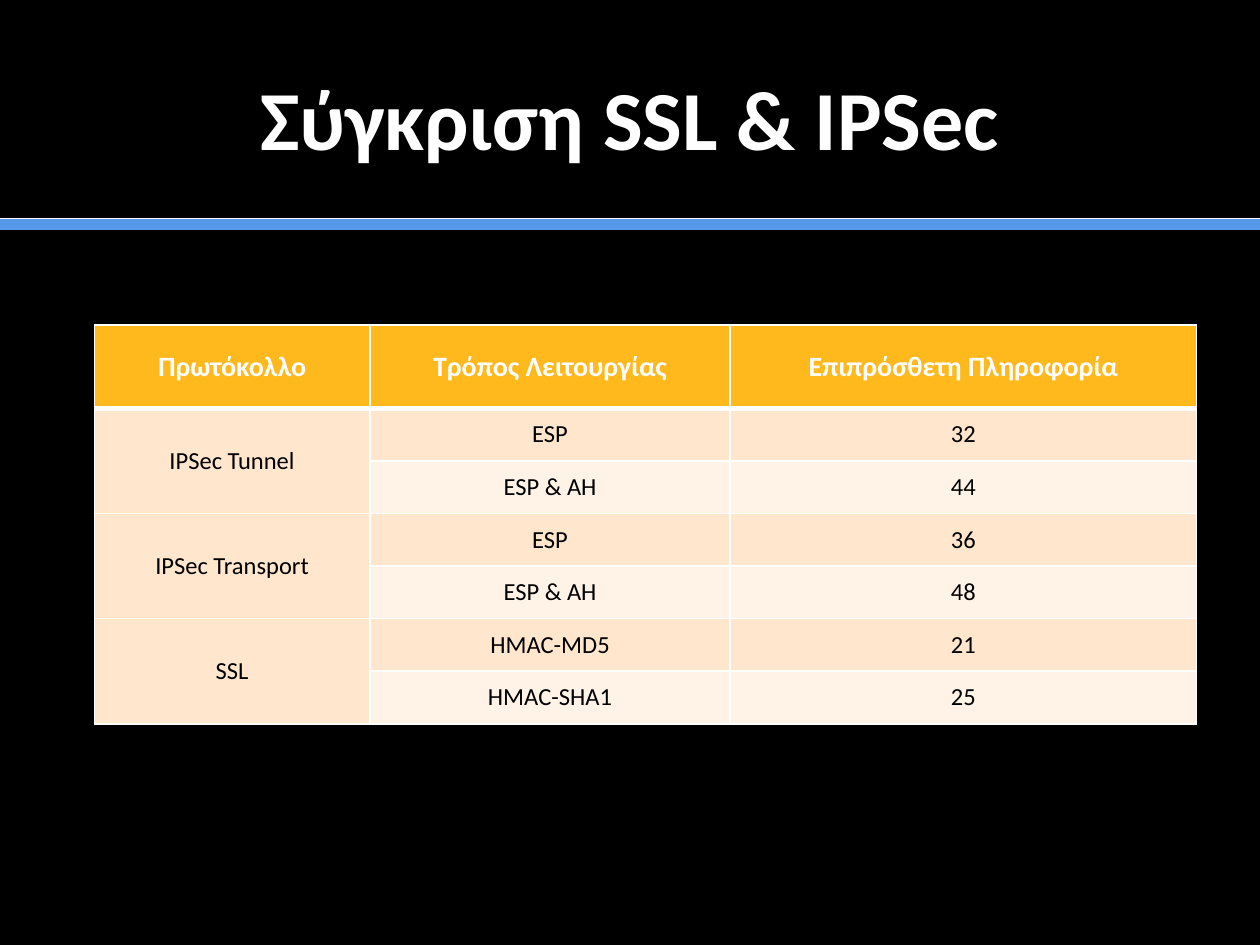
from dataclasses import dataclass

from lxml import etree
from pptx import Presentation
from pptx.dml.color import RGBColor
from pptx.enum.shapes import MSO_CONNECTOR
from pptx.enum.text import MSO_ANCHOR, PP_ALIGN
from pptx.oxml.ns import qn
from pptx.util import Cm, Pt

STRAIGHT = MSO_CONNECTOR.STRAIGHT
MIDDLE = MSO_ANCHOR.MIDDLE
CENTER = PP_ALIGN.CENTER

SLIDE_WIDTH, SLIDE_HEIGHT = 25.4, 19.05
HEADINGS = ["Πρωτόκολλο", "Τρόπος Λειτουργίας", "Επιπρόσθετη Πληροφορία"]
PROTOCOLS = [
    ("IPSec Tunnel", [("ESP", "32"), ("ESP & AH", "44")]),
    ("IPSec Transport", [("ESP", "36"), ("ESP & AH", "48")]),
    ("SSL", [("HMAC-MD5", "21"), ("HMAC-SHA1", "25")]),
]
COLUMN_WIDTHS = [5.56, 7.26, 9.4]
HEADER_HEIGHT, ROW_HEIGHT = 1.68, 1.06


@dataclass(frozen=True)
class Theme:
    font: str = "Calibri"
    background: str = "000000"
    light: str = "FFFFFF"
    dark: str = "000000"
    accent: str = "5799E8"
    header: str = "FFB91D"
    band: str = "FFE6CD"
    band_light: str = "FFF3E8"
    title_size: float = 48
    header_size: float = 16
    body_size: float = 14
    border: float = 1
    header_border: float = 3


def write(frame, text, *, font, size, color, bold=False):
    """Fill a text frame with one centred paragraph."""
    paragraph = frame.paragraphs[0]
    paragraph.alignment = CENTER
    run = paragraph.add_run()
    run.text = text
    run.font.name = font
    run.font.size = Pt(size)
    run.font.bold = bold
    run.font.color.rgb = RGBColor.from_string(color)


def set_borders(cell, color, **widths):
    """Draw cell edges; widths are points keyed by L, R, T and B."""
    properties = cell._tc.get_or_add_tcPr()
    for side in "LRTB":
        edge = etree.SubElement(properties, qn(f"a:ln{side}"), w=str(Pt(widths[side])))
        fill = etree.SubElement(edge, qn("a:solidFill"))
        etree.SubElement(fill, qn("a:srgbClr"), val=color)


class SlideBuilder:
    def __init__(self, slide, theme):
        self.slide = slide
        self.theme = theme

    def background(self):
        fill = self.slide.background.fill
        fill.solid()
        fill.fore_color.rgb = RGBColor.from_string(self.theme.background)

    def rule(self, y, color, width):
        """Draw a line across the whole slide."""
        rule = self.slide.shapes.add_connector(
            STRAIGHT, Cm(0), Cm(y), Cm(SLIDE_WIDTH), Cm(y))
        rule.line.color.rgb = RGBColor.from_string(color)
        rule.line.width = Pt(width)
        etree.SubElement(rule._element.spPr, qn("a:effectLst"))

    def title(self, text, left, top, width, height):
        frame = self.slide.shapes.add_textbox(
            Cm(left), Cm(top), Cm(width), Cm(height)).text_frame
        frame.word_wrap = True
        frame.vertical_anchor = MIDDLE
        write(frame, text, font=self.theme.font, size=self.theme.title_size,
              color=self.theme.light, bold=True)

    def cell(self, cell, text, fill, *, heading=False, below_heading=False):
        theme = self.theme
        set_borders(cell, theme.light, L=theme.border, R=theme.border,
                    T=theme.header_border if below_heading else theme.border,
                    B=theme.header_border if heading else theme.border)
        cell.fill.solid()
        cell.fill.fore_color.rgb = RGBColor.from_string(fill)
        cell.vertical_anchor = MIDDLE
        if text:
            write(cell.text_frame, text, font=theme.font, bold=heading,
                  size=theme.header_size if heading else theme.body_size,
                  color=theme.light if heading else theme.dark)

    def protocol_table(self, headings, protocols, left, top):
        """Build the table, each protocol cell spanning its modes."""
        theme = self.theme
        heights = [HEADER_HEIGHT] + [ROW_HEIGHT] * sum(len(modes) for _, modes in protocols)
        table = self.slide.shapes.add_table(
            len(heights), len(headings), Cm(left), Cm(top),
            Cm(sum(COLUMN_WIDTHS)), Cm(sum(heights))).table
        for column, width in zip(table.columns, COLUMN_WIDTHS):
            column.width = Cm(width)
        for row, height in zip(table.rows, heights):
            row.height = Cm(height)

        for column, heading in enumerate(headings):
            self.cell(table.cell(0, column), heading, theme.header, heading=True)
        row = 1
        for protocol, modes in protocols:
            first = row
            for mode, overhead in modes:
                label = protocol if row == first else ""
                band = theme.band if row % 2 else theme.band_light
                contents = [(label, theme.band), (mode, band), (overhead, band)]
                for column, (text, fill) in enumerate(contents):
                    self.cell(table.cell(row, column), text, fill, below_heading=row == 1)
                row += 1
            table.cell(first, 0).merge(table.cell(row - 1, 0))


def main():
    presentation = Presentation()
    presentation.slide_width = Cm(SLIDE_WIDTH)
    presentation.slide_height = Cm(SLIDE_HEIGHT)
    theme = Theme()
    builder = SlideBuilder(
        presentation.slides.add_slide(presentation.slide_layouts[6]), theme)
    builder.background()
    builder.rule(4.52, theme.accent, 7)
    builder.rule(4.4, theme.light, 0.5)
    builder.title("Σύγκριση SSL & IPSec", 1.27, 0.76, 22.86, 3.18)
    builder.protocol_table(HEADINGS, PROTOCOLS, 1.9, 6.55)
    presentation.save("out.pptx")


if __name__ == "__main__":
    main()
